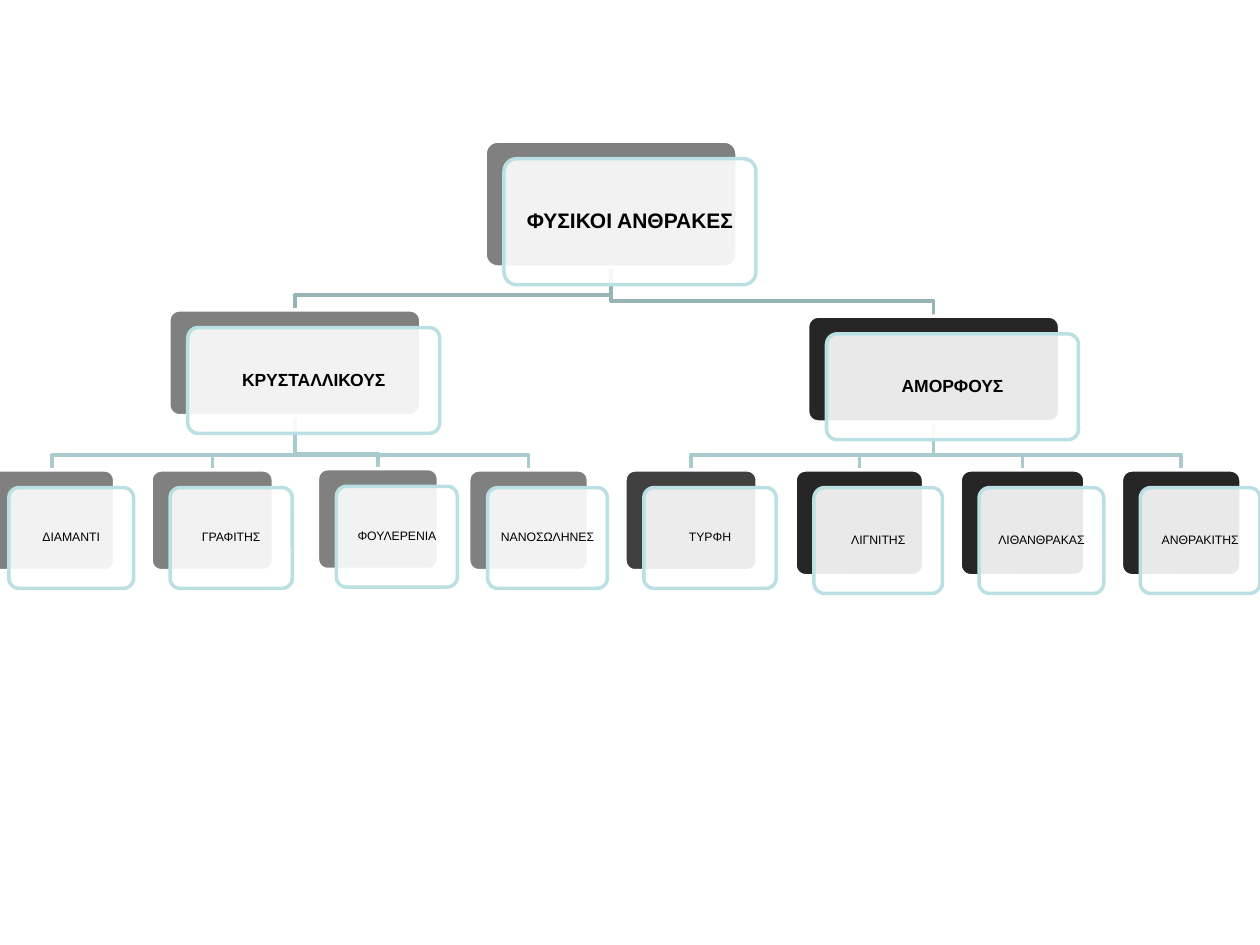
from dataclasses import dataclass
from typing import Any

from lxml.etree import SubElement
from pptx import Presentation
from pptx.dml.color import RGBColor
from pptx.dml.fill import FillFormat
from pptx.enum.shapes import MSO_SHAPE
from pptx.enum.text import MSO_ANCHOR, PP_ALIGN
from pptx.oxml.ns import qn
from pptx.util import Inches, Pt

SHIFT_X, SHIFT_Y = 0.15, 0.14   # front card relative to its backing
CORNER = 0.1
BEND_GAP = 0.12                 # height of a branch bend above the child
GREY, CHARCOAL, BLACK = "808080", "404040", "262626"


@dataclass(frozen=True)
class Level:
    size: int
    bold: bool
    inset: float
    branch_color: str


ROOT = Level(12, True, 0.05, "96B3B6")
GROUP = Level(10, True, 0.04, "AACBCE")
LEAF = Level(7, False, 0.03, "AACBCE")


@dataclass(frozen=True)
class Node:
    label: str
    level: Level
    left: float
    top: float
    width: float
    height: float
    color: str
    children: tuple["Node", ...] = ()

    @property
    def center(self) -> float:
        return self.left + self.width / 2


CRYSTALLINE = Node("ΚΡΥΣΤΑΛΛΙΚΟΥΣ", GROUP, 1.34, 2.46, 2, 0.84, GREY, (
    Node("ΔΙΑΜΑΝΤΙ", LEAF, -0.08, 3.73, 0.99, 0.8, GREY),
    Node("ΓΡΑΦΙΤΗΣ", LEAF, 1.2, 3.73, 0.97, 0.8, GREY),
    Node("ΦΟΥΛΕΡΕΝΙΑ", LEAF, 2.52, 3.72, 0.96, 0.8, GREY),
    Node("ΝΑΝΟΣΩΛΗΝΕΣ", LEAF, 3.72, 3.73, 0.95, 0.8, GREY),
))
AMORPHOUS = Node("ΑΜΟΡΦΟΥΣ", GROUP, 6.41, 2.51, 2, 0.84, BLACK, (
    Node("ΤΥΡΦΗ", LEAF, 4.96, 3.73, 1.05, 0.8, CHARCOAL),
    Node("ΛΙΓΝΙΤΗΣ", LEAF, 6.31, 3.73, 1.02, 0.84, BLACK),
    Node("ΛΙΘΑΝΘΡΑΚΑΣ", LEAF, 7.62, 3.73, 0.99, 0.84, BLACK),
    Node("ΑΝΘΡΑΚΙΤΗΣ", LEAF, 8.9, 3.73, 0.95, 0.84, BLACK),
))
NATURAL_CARBONS = Node("ΦΥΣΙΚΟΙ ΑΝΘΡΑΚΕΣ", ROOT, 3.85, 1.12, 2, 1, GREY,
                       (CRYSTALLINE, AMORPHOUS))


def apply_format(target: Any, values: dict[str, Any]) -> None:
    for name, value in values.items():
        setattr(target, name, value)


def paint(fill: FillFormat, color: str, opacity: int = 100) -> None:
    fill.solid()
    fill.fore_color.rgb = RGBColor.from_string(color)
    if opacity < 100:
        color_element = fill._xPr.find(qn("a:solidFill"))[0]
        SubElement(color_element, qn("a:alpha"), val=str(opacity * 1000))


def draw_branch(shapes: Any, parent: Node, child: Node) -> None:
    bend = child.top - BEND_GAP
    points = [(Inches(x), Inches(y)) for x, y in (
        (parent.center, parent.top + parent.height),
        (parent.center, bend), (child.center, bend), (child.center, child.top))]
    builder = shapes.build_freeform(*points[0])
    builder.add_line_segments(points[1:], close=False)
    branch = builder.convert_to_shape()
    branch.shadow.inherit = False
    branch.fill.background()
    paint(branch.line.fill, parent.level.branch_color)
    branch.line.width = Pt(2)


def draw_branches(shapes: Any, parent: Node) -> None:
    for child in reversed(parent.children):
        draw_branches(shapes, child)
        draw_branch(shapes, parent, child)


def draw_card(shapes: Any, node: Node, shift_x: float, shift_y: float,
              color: str, border: str, opacity: int) -> None:
    card = shapes.add_shape(
        MSO_SHAPE.ROUNDED_RECTANGLE, Inches(node.left + shift_x),
        Inches(node.top + shift_y), Inches(node.width), Inches(node.height))
    card.adjustments[0] = CORNER
    card.shadow.inherit = False
    paint(card.fill, color, opacity)
    paint(card.line.fill, border)
    card.line.width = Pt(2)


def draw_label(shapes: Any, node: Node) -> None:
    # The label keeps clear of the card's rounded corners
    margin = 0.29 * CORNER * node.height
    label = shapes.add_textbox(
        Inches(node.left + SHIFT_X + margin), Inches(node.top + SHIFT_Y + margin),
        Inches(node.width - 2 * margin), Inches(node.height - 2 * margin))
    frame = label.text_frame
    inset = Inches(node.level.inset)
    apply_format(frame, {
        "word_wrap": True, "vertical_anchor": MSO_ANCHOR.MIDDLE,
        "margin_left": inset, "margin_top": inset,
        "margin_right": inset, "margin_bottom": inset})
    paragraph = frame.paragraphs[0]
    apply_format(paragraph, {"alignment": PP_ALIGN.CENTER, "line_spacing": 0.9})
    run = paragraph.add_run()
    run.text = node.label
    apply_format(run.font, {"name": "Arial", "size": Pt(node.level.size),
                            "bold": node.level.bold})
    paint(run.font.fill, "000000")


def draw_nodes(shapes: Any, node: Node) -> None:
    draw_card(shapes, node, 0, 0, node.color, "FFFFFF", 100)
    draw_card(shapes, node, SHIFT_X, SHIFT_Y, "FFFFFF", "BBE0E3", 90)
    draw_label(shapes, node)
    for child in node.children:
        draw_nodes(shapes, child)


def main() -> None:
    presentation = Presentation()
    presentation.slide_width = Inches(10)
    presentation.slide_height = Inches(7.5)
    # The slide has no title, so it takes the blank layout
    slide = presentation.slides.add_slide(presentation.slide_layouts[6])

    # Branches lie behind the cards
    draw_branches(slide.shapes, NATURAL_CARBONS)
    draw_nodes(slide.shapes, NATURAL_CARBONS)
    presentation.save("out.pptx")


if __name__ == "__main__":
    main()
